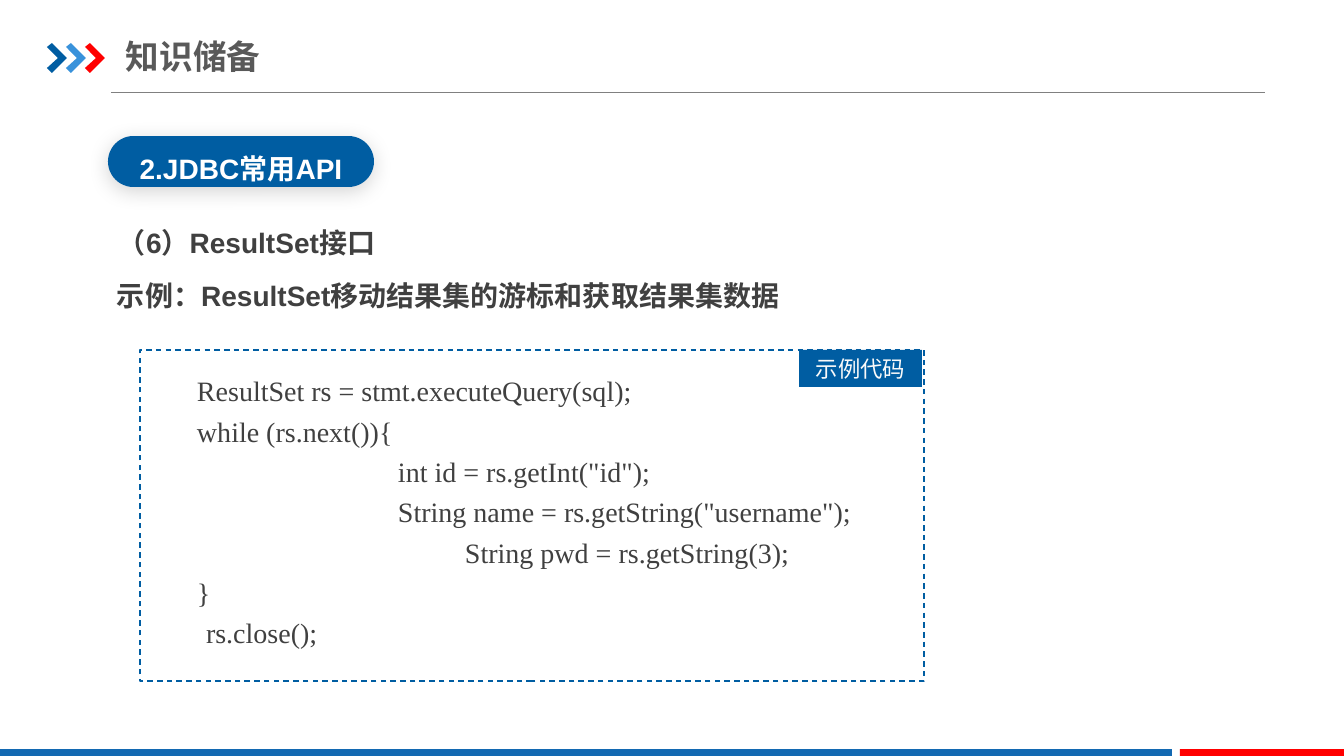
from dataclasses import dataclass

import lxml.etree
import pptx
import pptx.dml.color
import pptx.enum.dml
import pptx.enum.shapes
import pptx.enum.text
import pptx.oxml.ns
import pptx.util

SHAPE = pptx.enum.shapes.MSO_SHAPE
ALIGN = pptx.enum.text.PP_ALIGN
ANCHOR = pptx.enum.text.MSO_ANCHOR
EMU_PER_PX = 914400 / 100.8


@dataclass(frozen=True)
class Theme:
    blue: str = "005DA2"
    sky: str = "3992DB"
    red: str = "FF0000"
    footer_blue: str = "1369B2"
    rule: str = "808080"
    title: str = "595959"
    body: str = "404040"
    white: str = "FFFFFF"
    tag: str = "FAFAFA"
    shadow: str = "000000"
    title_size: int = 24
    body_size: int = 20
    tag_size: int = 16
    latin: str = "Arial"
    chinese: str = "Noto Sans CJK SC"
    code: str = "Times New Roman"


def px(length):
    return pptx.util.Emu(round(length * EMU_PER_PX))


def rgb(value):
    return pptx.dml.color.RGBColor.from_string(value)


def add_xml(parent, tag, **attributes):
    return lxml.etree.SubElement(parent, pptx.oxml.ns.qn(tag), attributes)


def apply(target, values):
    for name, value in values.items():
        setattr(target, name, value)


class SlideBuilder:
    def __init__(self, slide, theme):
        self.shapes = slide.shapes
        self.theme = theme

    def paint(self, shape, fill=None, outline=None):
        shape.shadow.inherit = False
        if fill:
            shape.fill.solid()
            shape.fill.fore_color.rgb = rgb(fill)
        else:
            shape.fill.background()
        if outline:
            shape.line.color.rgb = rgb(outline)
            apply(shape.line, {
                "width": pptx.util.Pt(1),
                "dash_style": pptx.enum.dml.MSO_LINE.DASH,
            })
        else:
            shape.line.fill.background()
        return shape

    def block(self, box, fill=None, outline=None, kind=SHAPE.RECTANGLE):
        shape = self.shapes.add_shape(kind, *map(px, box))
        return self.paint(shape, fill, outline)

    def pill(self, box, fill):
        shape = self.block(box, fill, kind=SHAPE.ROUNDED_RECTANGLE)
        shape.adjustments[0] = 0.5
        effects = shape._element.spPr.find(pptx.oxml.ns.qn("a:effectLst"))
        glow = add_xml(effects, "a:outerShdw", blurRad=str(pptx.util.Pt(15)),
                       dist=str(pptx.util.Pt(3)), dir="5400000", rotWithShape="0")
        tint = add_xml(glow, "a:srgbClr", val=self.theme.shadow)
        add_xml(tint, "a:alpha", val="17000")

    def outline(self, points, fill):
        pen = self.shapes.build_freeform(*points[0], scale=EMU_PER_PX)
        pen.add_line_segments(points[1:], close=True)
        self.paint(pen.convert_to_shape(), fill)

    def rule(self, left, right, y, color):
        line = self.shapes.add_connector(
            pptx.enum.shapes.MSO_CONNECTOR.STRAIGHT, px(left), px(y), px(right), px(y))
        line.line.color.rgb = rgb(color)
        line.line.width = pptx.util.Pt(0.5)
        add_xml(line._element.spPr, "a:effectLst")

    def text(self, box, lines, **style):
        self.fill_text(self.shapes.add_textbox(*map(px, box)), lines, **style)

    def fill_text(self, shape, lines, size, color, font, bold=False, align=ALIGN.LEFT,
                  spacing=1.0, anchor=ANCHOR.TOP, side=10):
        """Fill a shape with (indent, wording) lines."""
        frame = shape.text_frame
        apply(frame, {
            "word_wrap": True, "vertical_anchor": anchor,
            "margin_left": px(side), "margin_right": px(side),
            "margin_top": px(5), "margin_bottom": px(5),
        })
        for number, (indent, wording) in enumerate(lines):
            paragraph = frame.add_paragraph() if number else frame.paragraphs[0]
            apply(paragraph, {"alignment": align, "line_spacing": spacing})
            if indent:
                paragraph._p.get_or_add_pPr().set("marL", str(px(indent)))
            run = paragraph.add_run()
            run.text = wording
            apply(run.font, {"size": pptx.util.Pt(size), "bold": bold, "name": font})
            run.font.color.rgb = rgb(color)
            add_xml(run._r.get_or_add_rPr(), "a:ea", typeface=self.theme.chinese)


def main():
    theme = Theme()
    deck = pptx.Presentation()
    apply(deck, {"slide_width": px(1344), "slide_height": px(756)})
    page = SlideBuilder(deck.slides.add_slide(deck.slide_layouts[6]), theme)

    # Header: rule, three chevrons and title
    page.rule(111, 1265, 92, theme.rule)
    chevron = [(0, 4), (5, 0), (20, 15), (5, 30), (0, 25), (11, 15)]
    for step, color in enumerate((theme.blue, theme.sky, theme.red)):
        page.outline([(47 + 19 * step + x, 43 + y) for x, y in chevron], color)
    page.text((126, 29, 429, 55), [(0, "知识储备")], size=theme.title_size,
              color=theme.title, font=theme.chinese, bold=True,
              anchor=ANCHOR.MIDDLE, side=0)

    # Footer bars
    page.block((0, 749, 1172, 9), theme.footer_blue)
    page.block((1180, 749, 164, 9), theme.red)

    # Section heading
    heading = {"size": theme.body_size, "font": theme.latin, "bold": True}
    page.pill((108, 136, 266, 51), theme.blue)
    page.text((98, 135, 286, 55), [(0, "2.JDBC常用API")], color=theme.white,
              align=ALIGN.CENTER, spacing=1.35, **heading)

    # Topic and example lines
    for left, top, width, wording in (
        (108, 204, 453, "（6）ResultSet接口"),
        (107, 257, 832, "示例：ResultSet移动结果集的游标和获取结果集数据"),
    ):
        page.text((left, top, width, 60), [(0, wording)], color=theme.body,
                  spacing=1.5, **heading)

    # Sample code with its frame and tag
    code = [
        (67, "ResultSet rs = stmt.executeQuery(sql);"),
        (67, "while (rs.next()){"),
        (268, 'int id = rs.getInt("id");'),
        (268, 'String name = rs.getString("username");'),
        (335, "String pwd = rs.getString(3);"),
        (67, "}"),
        (76, "rs.close();"),
    ]
    page.text((120, 362, 767, 296), code, size=theme.body_size, color=theme.body,
              font=theme.code, spacing=1.2)
    page.block((140, 350, 784, 331), outline=theme.blue)
    tag = page.block((799, 350, 123, 37), theme.blue)
    page.fill_text(tag, [(0, "示例代码")], size=theme.tag_size, color=theme.tag,
                   font=theme.chinese, align=ALIGN.CENTER, anchor=ANCHOR.MIDDLE)

    deck.save("out.pptx")


if __name__ == "__main__":
    main()
